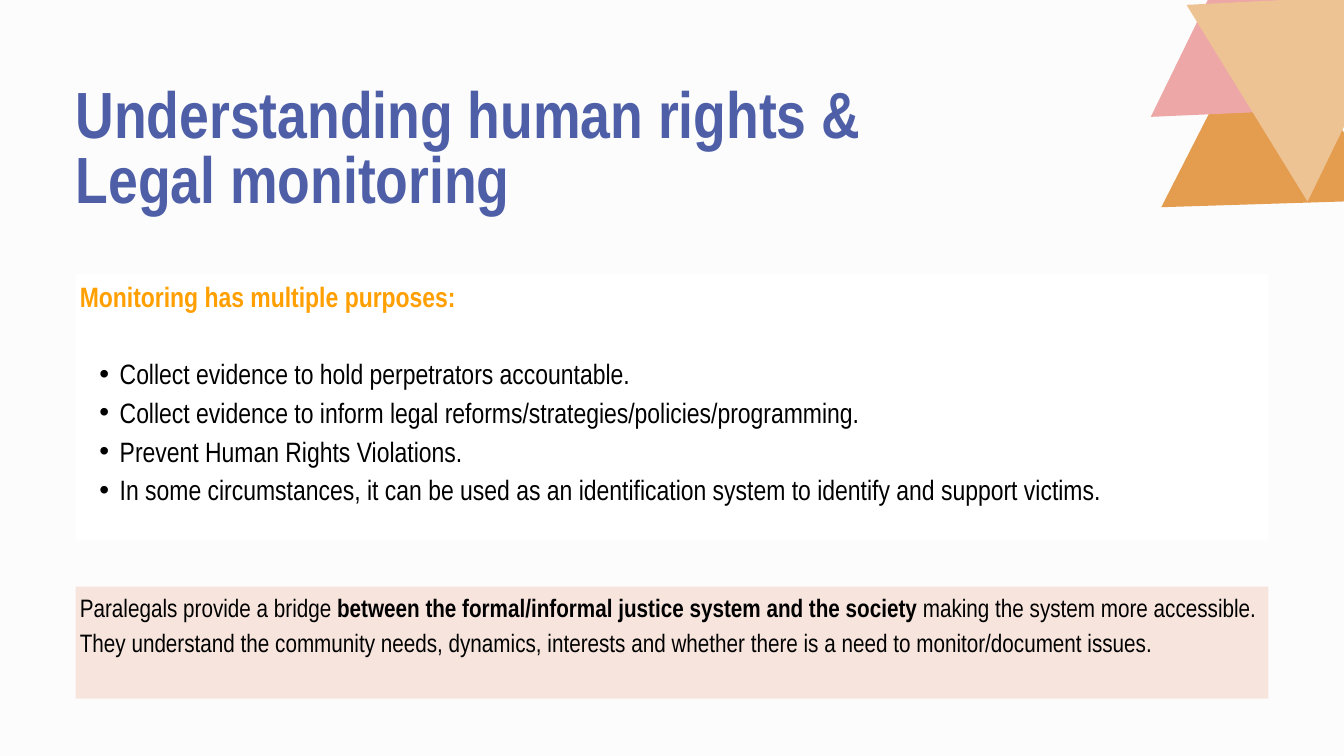
from dataclasses import dataclass

from lxml.etree import SubElement
from pptx import Presentation
from pptx.dml.color import RGBColor as Rgb
from pptx.enum.shapes import MSO_SHAPE as Kind
from pptx.oxml.ns import qn
from pptx.util import Pt

PX = 9525  # EMU per px, 96 px to the inch


@dataclass(frozen=True)
class Theme:
    font: str = "Arial Narrow"
    page: str = "FCFCFC"
    card: str = "FFFFFF"
    note: str = "F7E5DD"
    title: str = "4E5FA7"
    head: str = "FF9F00"
    ink: str = "000000"
    orange: str = "E49C4E"
    pink: str = "EDA7A7"
    sand: str = "EEC394"
    title_size: int = 70
    body_size: int = 30
    note_size: int = 27


T = Theme()
GOALS = [
    "Collect evidence to hold perpetrators accountable.",
    "Collect evidence to inform legal reforms/strategies/policies/programming.",
    "Prevent Human Rights Violations.",
    "In some circumstances, it can be used as an identification system "
    "to identify and support victims.",
]


def emu(*lengths):
    return [n * PX for n in lengths]


def paint(shape, color):
    shape.shadow.inherit = False
    shape.fill.solid()
    shape.fill.fore_color.rgb = Rgb.from_string(color)
    shape.line.fill.background()


def panel(slide, box, color):
    paint(slide.shapes.add_shape(Kind.RECTANGLE, *emu(*box)), color)


def frame(slide, box, pad=0):
    tf = slide.shapes.add_textbox(*emu(*box)).text_frame
    tf.word_wrap = True
    tf.margin_left = tf.margin_top = tf.margin_right = tf.margin_bottom = pad * PX
    return tf


def write(tf, *runs, size, color, lead, bold=False, bullet=False, before=0):
    """Add one paragraph; a run is a string, or a (string, bold) pair."""
    para = tf.paragraphs[0]
    if para.runs:
        para = tf.add_paragraph()
    para.line_spacing = Pt(lead)
    para.space_before = Pt(before)
    if bullet:
        props = para._p.get_or_add_pPr()
        props.set("marL", str(57 * PX))
        props.set("indent", str(-29 * PX))
        SubElement(props, qn("a:buFont")).set("typeface", "Arial")
        SubElement(props, qn("a:buChar")).set("char", "•")
    for item in runs:
        words, heavy = (item, bold) if isinstance(item, str) else item
        run = para.add_run()
        run.text = words
        run.font.name = T.font
        run.font.size = Pt(size)
        run.font.bold = heavy
        run.font.color.rgb = Rgb.from_string(color)


def goals(slide, box):
    x, y, w, h = box
    panel(slide, box, T.card)
    tf = frame(slide, (x, y - 5, w, h + 5), pad=6)
    look = dict(size=T.body_size, lead=41.4)
    write(tf, "Monitoring has multiple purposes:", color=T.head, bold=True, **look)
    for i, goal in enumerate(GOALS):
        write(tf, goal, color=T.ink, bullet=True, before=0 if i else 41.4, **look)


def note(slide, box):
    x, y, w, h = box
    panel(slide, box, T.note)
    tf = frame(slide, (x, y - 4, w, h + 4), pad=6)
    write(
        tf,
        "Paralegals provide a bridge ",
        ("between the formal/informal justice system and the society ", True),
        "making the system more accessible. They understand the community needs, "
        "dynamics, interests and whether there is a need to monitor/document issues.",
        size=T.note_size, color=T.ink, lead=37.3,
    )


def corner(slide, box):
    """Three tilted triangles that overlap, from back to front."""
    x, y = box[:2]
    for color, first, *rest in (
        (T.orange, (165, 132), (333, 416), (15, 426)),
        (T.pink, (145, 0), (318, 283), (0, 297)),
        (T.sand, (224, 418), (51, 137), (368, 121)),
    ):
        path = slide.shapes.build_freeform(*first, scale=PX)
        path.add_line_segments(rest, close=True)
        paint(path.convert_to_shape(*emu(x, y)), color)


def title(slide, box):
    tf = frame(slide, box)
    for line in ("Understanding human rights &", "Legal monitoring"):
        write(tf, line, size=T.title_size, color=T.title, lead=69.3, bold=True)


def main():
    deck = Presentation()
    deck.slide_width, deck.slide_height = emu(1920, 1080)
    slide = deck.slides.add_slide(deck.slide_layouts[6])
    back = slide.background.fill
    back.solid()
    back.fore_color.rgb = Rgb.from_string(T.page)
    goals(slide, (108, 391, 1704, 381))
    note(slide, (108, 838, 1704, 160))
    corner(slide, (1644, -130, 368, 426))
    title(slide, (108, 124, 1189, 213))
    deck.save("out.pptx")


if __name__ == "__main__":
    main()
